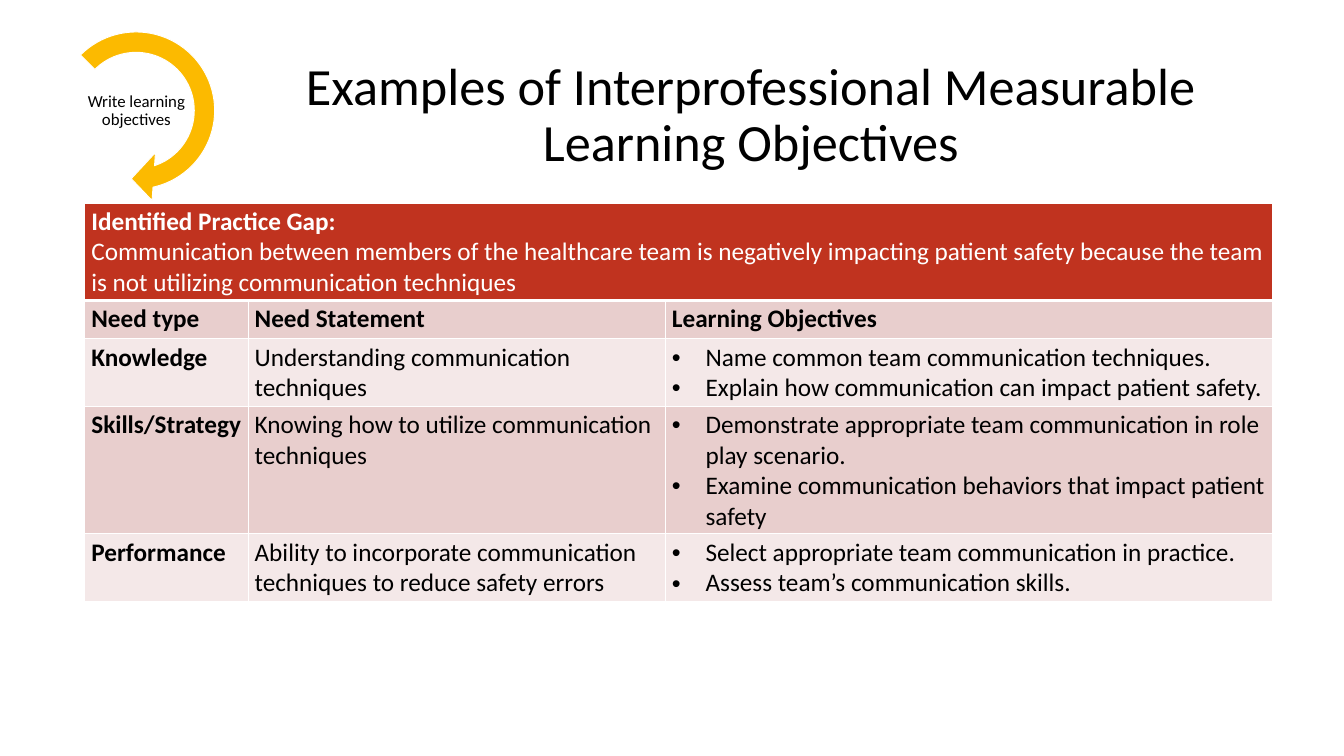
"""Build the slide of interprofessional measurable learning objectives."""
from dataclasses import dataclass

from lxml.etree import SubElement
from pptx import Presentation
from pptx.dml.color import RGBColor
from pptx.enum.shapes import MSO_SHAPE as Shape
from pptx.enum.text import MSO_ANCHOR as Anchor, PP_ALIGN as Align
from pptx.oxml import parse_xml
from pptx.oxml.ns import nsdecls, qn
from pptx.util import Inches, Pt

TITLE = "Examples of Interprofessional Measurable Learning Objectives"
STEP = "Write learning objectives"
GAP = [
    "Identified Practice Gap:",
    "Communication between members of the healthcare team is negatively impacting patient safety "
    "because the team is not utilizing communication techniques",
]
HEADINGS = ["Need type", "Need Statement", "Learning Objectives"]
NEEDS = [
    ("Knowledge", "Understanding communication techniques", [
        "Name common team communication techniques.",
        "Explain how communication can impact patient safety.",
    ]),
    ("Skills/Strategy", "Knowing how to utilize communication techniques", [
        "Demonstrate appropriate team communication in role play scenario.",
        "Examine communication behaviors that impact patient safety",
    ]),
    ("Performance", "Ability to incorporate communication techniques to reduce safety errors", [
        "Select appropriate team communication in practice.",
        "Assess team’s communication skills.",
    ]),
]

WIDTH, HEIGHT = Inches(20), Inches(11.25)
GRID = 100
TITLE_AREA = (16.4, 11.47, 78.95, 7.91)
ARROW_AREA = (3.25, 2.4, 13.75, 24.44)
STEP_AREA = (6.3, 11.29, 7.7, 6.84)
TABLE_CORNER = (6.3, 26.84)
TABLE_COLUMNS = [12.15, 31.05, 45.15]
TABLE_ROWS = [12.89, 5.07] + [8.36] * len(NEEDS)
ARROW_ADJUSTMENTS = [0.11, 11.42, 45, 135, 0.13]


@dataclass(frozen=True)
class Theme:
    font: str = "Calibri"
    text: str = "000000"
    light: str = "FFFFFF"
    arrow: str = "FCBA00"
    banner: str = "C0331F"
    bands: tuple = ("E8CECD", "F4E8E8")
    title_size: int = 56
    table_size: int = 27
    step_size: int = 18
    border: int = 1
    thick_border: int = 3


THEME = Theme()


def across(columns):
    return round(WIDTH * columns / GRID)


def down(rows):
    return round(HEIGHT * rows / GRID)


def place(left, top, width, height):
    return across(left), down(top), across(width), down(height)


def add_bullet(paragraph):
    properties = paragraph._p.get_or_add_pPr()
    properties.set("marL", str(Inches(0.5)))
    properties.set("indent", str(-Inches(0.5)))
    SubElement(properties, qn("a:buFont"), typeface="Arial")
    SubElement(properties, qn("a:buChar"), char="•")


def write(frame, lines, *, size, color=THEME.text, bold_lines=0, bullets=False,
          align=Align.LEFT, line_spacing=1.0):
    for index, line in enumerate(lines):
        paragraph = frame.paragraphs[0] if index == 0 else frame.add_paragraph()
        paragraph.alignment = align
        paragraph.line_spacing = line_spacing
        if bullets:
            add_bullet(paragraph)
        run = paragraph.add_run()
        run.text = line
        run.font.name = THEME.font
        run.font.size = Pt(size)
        run.font.bold = index < bold_lines
        run.font.color.rgb = RGBColor.from_string(color)


def add_label(slide, area, text, size, inset):
    frame = slide.shapes.add_textbox(*place(*area)).text_frame
    frame.word_wrap = True
    frame.vertical_anchor = Anchor.MIDDLE
    frame.margin_left = frame.margin_right = Inches(inset)
    frame.margin_top = frame.margin_bottom = Inches(inset / 2)
    write(frame, [text], size=size, align=Align.CENTER, line_spacing=0.9)


def add_arrow(slide):
    arrow = slide.shapes.add_shape(Shape.CIRCULAR_ARROW, *place(*ARROW_AREA))
    arrow.shadow.inherit = False
    for index, value in enumerate(ARROW_ADJUSTMENTS):
        arrow.adjustments[index] = value
    arrow.fill.solid()
    arrow.fill.fore_color.rgb = RGBColor.from_string(THEME.arrow)
    arrow.line.color.rgb = RGBColor.from_string(THEME.light)
    arrow.line.width = Pt(THEME.border)


def paint(cell, color, top=THEME.border, bottom=THEME.border):
    cell.fill.solid()
    cell.fill.fore_color.rgb = RGBColor.from_string(color)
    widths = {"lnL": THEME.border, "lnR": THEME.border, "lnT": top, "lnB": bottom}
    for index, (side, width) in enumerate(widths.items()):
        cell._tc.get_or_add_tcPr().insert(index, parse_xml(
            f'<a:{side} {nsdecls("a")} w="{Pt(width)}"><a:solidFill>'
            f'<a:srgbClr val="{THEME.light}"/></a:solidFill></a:{side}>'))


def add_needs_table(slide):
    area = place(*TABLE_CORNER, sum(TABLE_COLUMNS), sum(TABLE_ROWS))
    table = slide.shapes.add_table(len(TABLE_ROWS), len(TABLE_COLUMNS), *area).table
    for column, width in zip(table.columns, TABLE_COLUMNS):
        column.width = across(width)
    for row, height in zip(table.rows, TABLE_ROWS):
        row.height = down(height)

    banner = table.cell(0, 0)
    banner.merge(table.cell(0, len(TABLE_COLUMNS) - 1))
    for cell in table.rows[0].cells:
        paint(cell, THEME.banner, bottom=THEME.thick_border)
    write(banner.text_frame, GAP, size=THEME.table_size, color=THEME.light, bold_lines=1)

    for row, contents in enumerate([HEADINGS, *NEEDS], start=1):
        heading = row == 1
        for column, content in enumerate(contents):
            cell = table.cell(row, column)
            paint(cell, THEME.bands[(row - 1) % 2],
                  top=THEME.thick_border if heading else THEME.border)
            bullets = isinstance(content, list)
            write(cell.text_frame, content if bullets else [content], size=THEME.table_size,
                  bold_lines=int(heading or column == 0), bullets=bullets)


def main():
    presentation = Presentation()
    presentation.slide_width, presentation.slide_height = WIDTH, HEIGHT
    slide = presentation.slides.add_slide(presentation.slide_layouts[6])
    add_label(slide, TITLE_AREA, TITLE, THEME.title_size, inset=0.1)
    add_arrow(slide)
    add_label(slide, STEP_AREA, STEP, THEME.step_size, inset=0.01)
    add_needs_table(slide)
    presentation.save("out.pptx")


if __name__ == "__main__":
    main()
